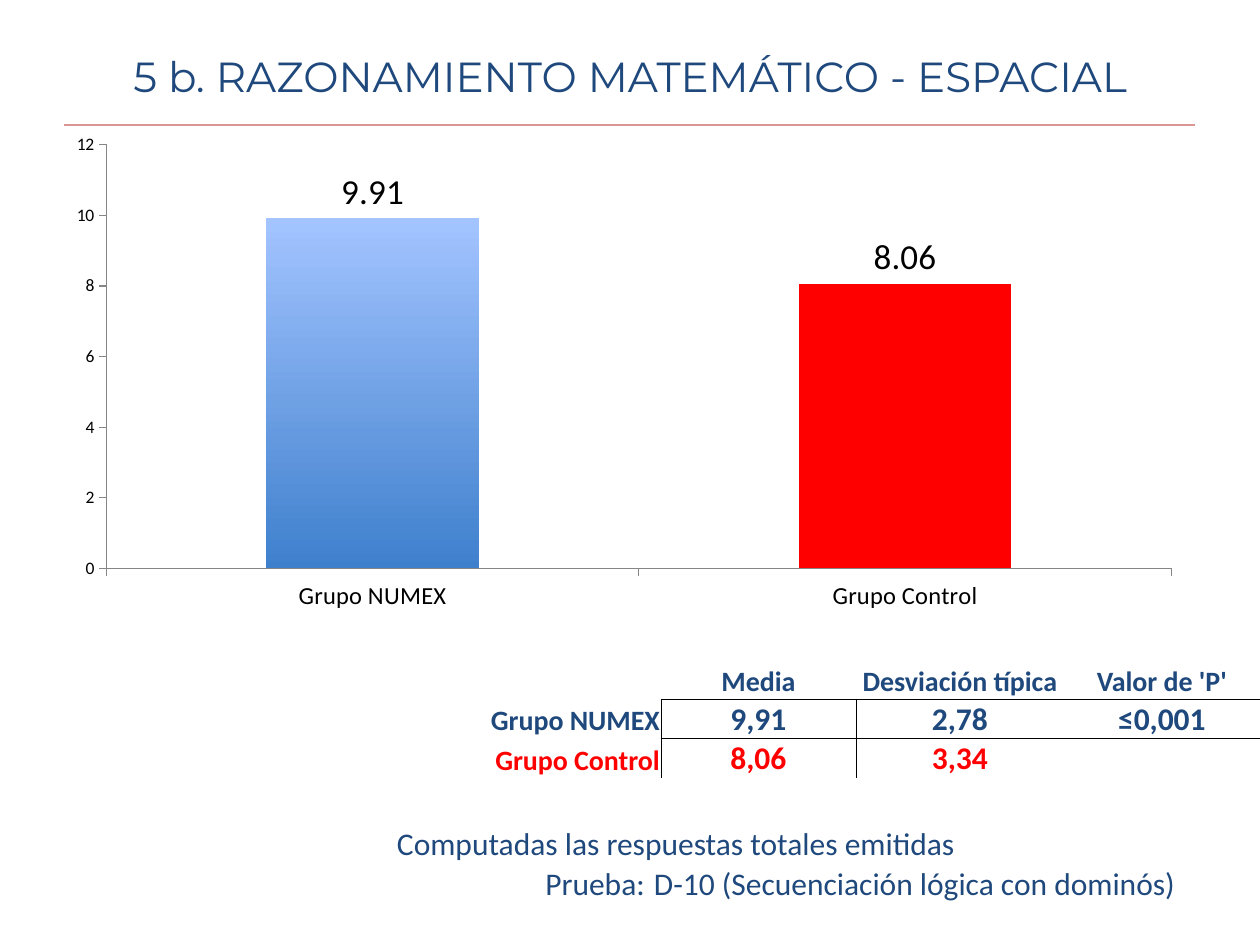
import pptx
import pptx.chart.data
import pptx.dml.color
import pptx.enum.chart
import pptx.enum.shapes
import pptx.enum.text
import pptx.oxml
import pptx.oxml.ns
import pptx.util
from lxml import etree

SCALE = 914400 / 126
HUES = {"navy": "1F497D", "red": "FF0000", "black": "000000", "rule": "D99694",
        "axis": "868686", "top": "A3C4FF", "base": "3F80CD"}
GROUPS = ["Grupo NUMEX", "Grupo Control"]
PLAIN = "{2D5ABB26-0587-4C30-8999-92F81FD0307C}"
ALIGN = pptx.enum.text.PP_ALIGN
qn = pptx.oxml.ns.qn


def px(n):
    return pptx.util.Emu(round(n * SCALE))


def rgb(hue):
    return pptx.dml.color.RGBColor.from_string(HUES[hue])


def style(font, size, hue, face="Calibri", bold=False):
    font.name, font.size, font.bold = face, pptx.util.Pt(size), bold
    font.color.rgb = rgb(hue)


def add_title(slide, box):
    title = slide.shapes.title
    title.left, title.top, title.width, title.height = map(px, box)
    frame = title.text_frame
    frame.text = "5 b. RAZONAMIENTO MATEMÁTICO - ESPACIAL"
    frame.vertical_anchor = pptx.enum.text.MSO_ANCHOR.MIDDLE
    para = frame.paragraphs[0]
    para.alignment = ALIGN.CENTER
    style(para.font, 24, "navy", "Montserrat")


def add_rule(slide, left, top, width):
    rule = slide.shapes.add_connector(pptx.enum.shapes.MSO_CONNECTOR.STRAIGHT,
                                      px(left), px(top), px(left + width), px(top))
    rule.line.color.rgb = rgb("rule")
    rule.line.width = pptx.util.Pt(0.75)
    etree.SubElement(rule._element.spPr, qn("a:effectLst"))


def add_bars(slide, box):
    data = pptx.chart.data.CategoryChartData()
    data.categories = GROUPS
    data.add_series("Series 1", [9.91, 8.06])
    kind = pptx.enum.chart.XL_CHART_TYPE.COLUMN_CLUSTERED
    chart = slide.shapes.add_chart(kind, *map(px, box), data).chart
    chart.has_legend = chart.has_title = False
    style(chart.font, 10, "black")
    for axis, size in ((chart.category_axis, 14), (chart.value_axis, 10)):
        axis.has_major_gridlines = False
        axis.major_tick_mark = pptx.enum.chart.XL_TICK_MARK.OUTSIDE
        axis.format.line.color.rgb = rgb("axis")
        style(axis.tick_labels.font, size, "black")
    chart.value_axis.minimum_scale = 0
    chart.value_axis.maximum_scale = 12
    chart.value_axis.major_unit = 2

    plot = chart.plots[0]
    plot.vary_by_categories = False
    plot.gap_width = 150
    bars = plot.series[0]
    fill = bars.format.fill
    fill.gradient()
    fill.gradient_angle = 270
    for stop, hue in zip(fill.gradient_stops, ("top", "base")):
        stop.color.rgb = rgb(hue)
    control = bars.points[1].format.fill
    control.solid()
    control.fore_color.rgb = rgb("red")
    labels = bars.data_labels
    labels.show_value = True
    labels.position = pptx.enum.chart.XL_LABEL_POSITION.OUTSIDE_END
    style(labels.font, 20, "black")


def add_grid(slide, left, top, widths, height, count):
    """Add a table without style, fill or borders."""
    table = slide.shapes.add_table(count, len(widths), px(left), px(top),
                                   px(sum(widths)), px(height * count)).table
    table.first_row = table.horz_banding = False
    table._tbl.tblPr.find(qn("a:tableStyleId")).text = PLAIN
    for col, width in zip(table.columns, widths):
        col.width = px(width)
    for row in table.rows:
        row.height = px(height)
    return table


def set_cell(cell, text, size, hue, align, bold=False, sides=""):
    """Write a cell; sides lists its borders in the order L, R, T, B."""
    cell.margin_left = cell.margin_right = cell.margin_top = px(1)
    cell.margin_bottom = 0
    cell.vertical_anchor = pptx.enum.text.MSO_ANCHOR.BOTTOM
    para = cell.text_frame.paragraphs[0]
    para.text = text
    para.alignment = align
    style(para.font, size, hue, bold=bold)
    props = cell._tc.get_or_add_tcPr()
    for side in sides:
        line = etree.SubElement(props, qn("a:ln" + side), w="6350")
        fill = etree.SubElement(line, qn("a:solidFill"))
        etree.SubElement(fill, qn("a:srgbClr"), val=HUES["black"])
    cell.fill.background()


def add_stats(slide, left, top):
    rows = [["", "Media", "Desviación típica", "Valor de 'P'"],
            [GROUPS[0], "9,91", "2,78", "≤0,001"],
            [GROUPS[1], "8,06", "3,34", ""]]
    table = add_grid(slide, left, top, [535, 195, 208, 196], 36, len(rows))
    for r, row in enumerate(rows):
        for c, text in enumerate(row):
            if r == 0:
                sides = "B" if c else ""
            elif c == 0:
                sides = "R"
            else:
                sides = ("L" if c == 1 else "") + ("T" if r == 1 else "")
            set_cell(table.cell(r, c), text, 18 if r and c else 16,
                     "red" if r == 2 else "navy",
                     ALIGN.CENTER if c else ALIGN.RIGHT, True, sides)


def add_notes(slide, left, top):
    rows = [["Computadas las respuestas totales emitidas", ""],
            ["Prueba: ", "D-10 (Secuenciación lógica con dominós)"],
            ["", ""]]
    table = add_grid(slide, left, top, [257, 607], 40, len(rows))
    for r, row in enumerate(rows):
        for c, text in enumerate(row):
            align = ALIGN.RIGHT if (r, c) == (1, 0) else ALIGN.LEFT
            set_cell(table.cell(r, c), text, 18, "navy", align)
    for r in (0, 2):
        table.cell(r, 0).merge(table.cell(r, 1))


def main():
    deck = pptx.Presentation()
    deck.slide_width, deck.slide_height = px(1260), px(945)
    slide = deck.slides.add_slide(deck.slide_layouts[5])
    add_title(slide, (0, 37, 1260, 77))
    add_rule(slide, 64, 125, 1131)
    add_notes(slide, 396, 824)
    add_stats(slide, 126, 663)
    add_bars(slide, (54, 125, 1140, 496))
    deck.save("out.pptx")


if __name__ == "__main__":
    main()
